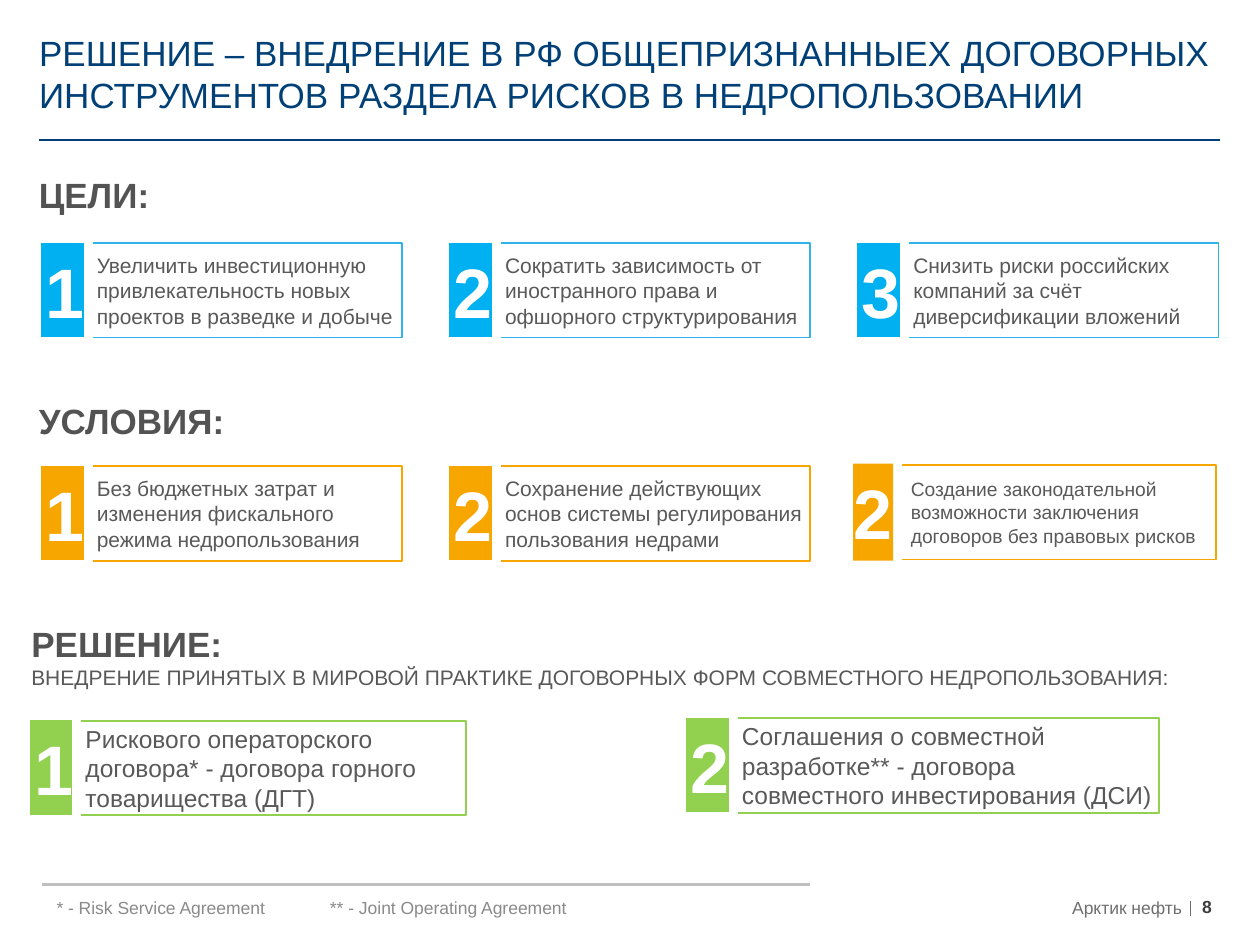
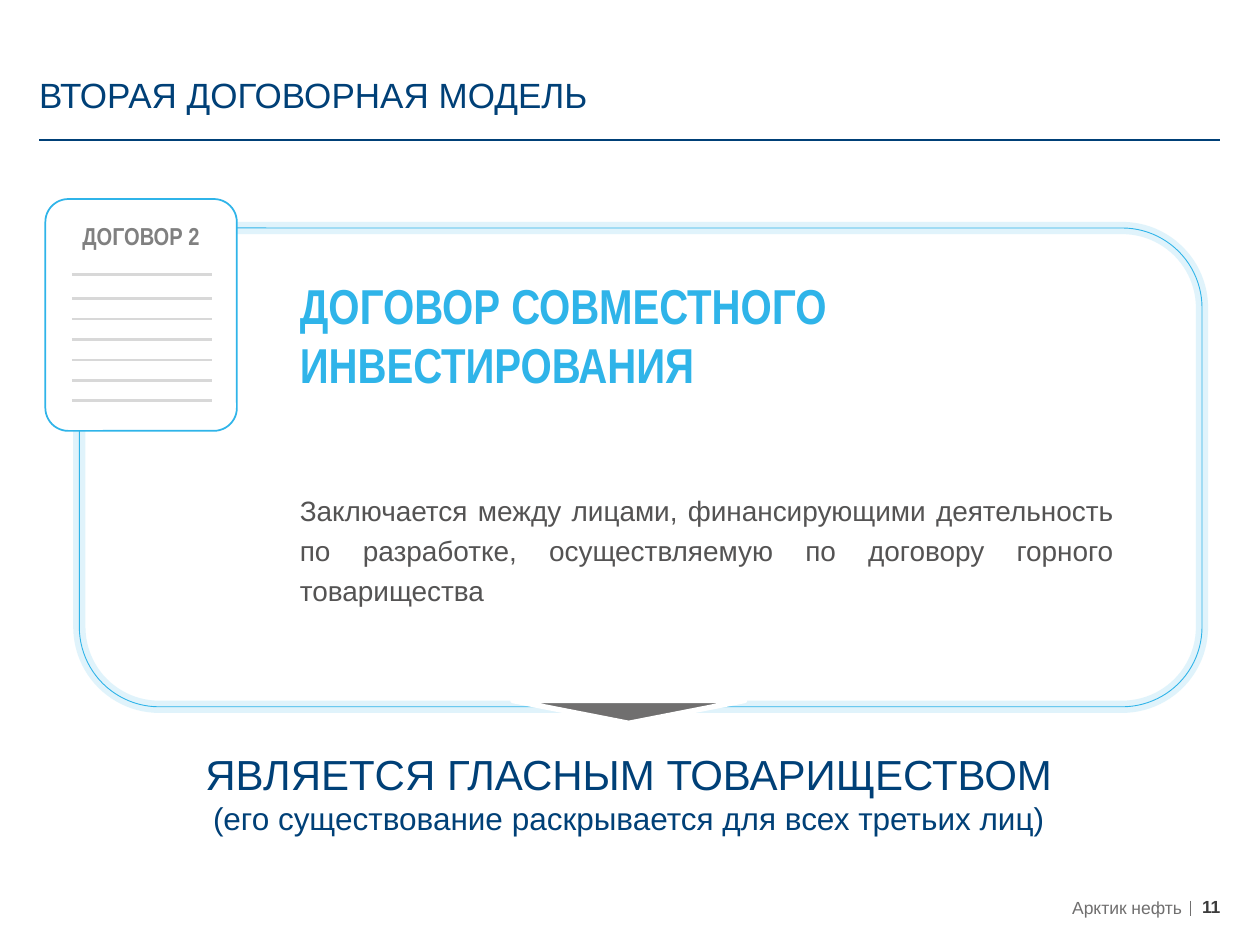
from dataclasses import dataclass

from lxml import etree
from pptx import Presentation
from pptx import util as u
from pptx.dml.color import RGBColor
from pptx.enum import shapes, text
from pptx.oxml.ns import qn

# Grid: every length below is in columns or rows
WIDTH, HEIGHT = u.Inches(10), u.Inches(7.5)
COLUMNS, ROWS = 100, 75
LEFT, RIGHT = 3.1, 96.8

COLORS = {
    "navy": "004077", "cyan": "2FB4E9", "blue": "00B0F0", "orange": "F7A600",
    "green": "92D050", "white": "FFFFFF", "heading": "545353", "body": "595959",
    "note": "8A8A8A", "footer": "706F6F", "number": "3C3C3C", "rule": "BFBFBF",
    "paper": "D8D8D8", "label": "808080",
}
COMPANY = "Арктик нефть"
ALIGN, ANCHOR = text.PP_ALIGN, text.MSO_ANCHOR
SHAPE = shapes.MSO_SHAPE


def color(name):
    return RGBColor.from_string(COLORS[name])


@dataclass
class Line:
    """One paragraph with its look."""
    words: str
    size: float
    color: str
    bold: bool = False
    align: ALIGN = ALIGN.LEFT
    font: str = "Arial"
    spacing: float = 1.0


class Deck:
    def __init__(self):
        self.presentation = Presentation()
        self.presentation.slide_width = WIDTH
        self.presentation.slide_height = HEIGHT
        self.slide = None

    def place(self, column, row, columns, rows):
        x, y = WIDTH / COLUMNS, HEIGHT / ROWS
        return [round(v) for v in (column * x, row * y, columns * x, rows * y)]

    def fill_text(self, frame, lines, margins=(0, 0, 0, 0), anchor=ANCHOR.TOP, wrap=True):
        frame.auto_size = text.MSO_AUTO_SIZE.NONE
        frame.word_wrap = wrap
        frame.vertical_anchor = anchor
        (frame.margin_left, frame.margin_top,
         frame.margin_right, frame.margin_bottom) = map(u.Inches, margins)
        for index, line in enumerate(lines):
            paragraph = frame.add_paragraph() if index else frame.paragraphs[0]
            paragraph.text = line.words
            paragraph.alignment = line.align
            paragraph.line_spacing = line.spacing
            font = paragraph.font
            font.name, font.size, font.bold = line.font, u.Pt(line.size), line.bold
            font.color.rgb = color(line.color)

    def label(self, box, *lines, **layout):
        shape = self.slide.shapes.add_textbox(*self.place(*box))
        self.fill_text(shape.text_frame, lines, **layout)

    def shape(self, box, fill=None, line=None, weight=1, kind=SHAPE.RECTANGLE, opacity=None):
        shape = self.slide.shapes.add_shape(kind, *self.place(*box))
        shape.shadow.inherit = False
        if fill:
            shape.fill.solid()
            shape.fill.fore_color.rgb = color(fill)
        else:
            shape.fill.background()
        if line:
            shape.line.color.rgb = color(line)
            shape.line.width = u.Pt(weight)
        else:
            shape.line.fill.background()
        if opacity:
            tint = shape.line._ln.find(".//" + qn("a:srgbClr"))
            etree.SubElement(tint, qn("a:alpha"), val=str(opacity * 1000))
        return shape

    def line(self, column, row, columns, rows, ink, weight):
        x, y, width, height = self.place(column, row, columns, rows)
        line = self.slide.shapes.add_connector(
            shapes.MSO_CONNECTOR.STRAIGHT, x, y, x + width, y + height)
        line.line.color.rgb = color(ink)
        line.line.width = u.Pt(weight)
        etree.SubElement(line._element.spPr, qn("a:effectLst"))

    def new_slide(self, title, number):
        """Start a slide with its title, rule and footer."""
        self.slide = self.presentation.slides.add_slide(self.presentation.slide_layouts[5])
        holder = self.slide.shapes.title
        holder.left, holder.top, holder.width, holder.height = self.place(
            LEFT, 2.4, RIGHT - LEFT, 6.8)
        self.fill_text(holder.text_frame, [Line(title, 20, "navy")], anchor=ANCHOR.BOTTOM)
        self.line(LEFT, 11.1, RIGHT - LEFT, 0, "navy", 1)
        self.line(94.5, 71.5, 0, 1.2, "footer", 0.75)
        self.label((95.4, 71.1, 2.4, 1.8), Line(str(number), 10, "number", True))
        self.label((59.4, 71.1, 34.4, 1.8),
                   Line(COMPANY, 10, "footer", align=ALIGN.RIGHT), anchor=ANCHOR.MIDDLE)

    def heading(self, column, row, *lines):
        self.label((column, row, 98, 6.4), *lines, margins=(0.1, 0.05, 0.1, 0.05))

    def panel(self, column, row, columns, words, ink, size):
        panel = self.shape((column, row, columns, 7.5), "white", ink)
        self.fill_text(panel.text_frame, [Line(words, size, "body")],
                       margins=(0.1, 0.05, 0, 0.05), anchor=ANCHOR.MIDDLE)

    def digit(self, column, row, columns, number):
        self.label((column, row, columns, 7.7),
                   Line(str(number), 40, "white", True, ALIGN.CENTER),
                   margins=(0, 0.05, 0, 0.05))

    def card(self, column, row, columns, number, words, block, edge, size=12):
        """A panel with a numbered block on its left edge."""
        self.panel(column, row, columns, words, edge, size)
        self.shape((column - 3.8, row - 0.4, 4.1, 8.2), block, "white", 5)
        self.digit(column - 3.1, row - 0.1, 2.8, number)


def goals_slide(deck):
    deck.new_slide("РЕШЕНИЕ – ВНЕДРЕНИЕ В РФ ОБЩЕПРИЗНАННЫЕХ ДОГОВОРНЫХ "
                   "ИНСТРУМЕНТОВ РАЗДЕЛА РИСКОВ В НЕДРОПОЛЬЗОВАНИИ", 8)
    first, step, width = 6.7, 32.4, 25.2

    # Goals
    deck.heading(2.1, 13.3, Line("ЦЕЛИ:", 20, "heading", True))
    goals = [
        "Увеличить инвестиционную привлекательность новых проектов в разведке и добыче",
        "Сократить зависимость от иностранного права и офшорного структурирования",
        "Снизить риски российских компаний за счёт диверсификации вложений",
    ]
    for index, goal in enumerate(goals):
        deck.card(first + index * step, 19.3, width, index + 1, goal, "blue", "cyan")

    # Conditions
    deck.heading(2.1, 31.2, Line("УСЛОВИЯ:", 20, "heading", True))
    conditions = [
        "Без бюджетных затрат и изменения фискального режима недропользования",
        "Сохранение действующих основ системы регулирования пользования недрами",
    ]
    for index, condition in enumerate(conditions):
        deck.card(first + index * step, 37, width, index + 1, condition, "orange", "orange")
    deck.panel(71.3, 36.9, width, "Создание законодательной возможности заключения "
               "договоров без правовых рисков", "orange", 11)
    deck.shape((67.7, 36.8, 3.2, 7.7), "orange")
    deck.digit(67.7, 36.8, 3.2, 2)
    deck.shape((70.9, 36.7, 0.7, 8.1), "white")

    # Solution
    deck.heading(1.5, 48.9, Line("РЕШЕНИЕ:", 20, "heading", True),
                 Line("ВНЕДРЕНИЕ ПРИНЯТЫХ В МИРОВОЙ ПРАКТИКЕ ДОГОВОРНЫХ ФОРМ "
                      "СОВМЕСТНОГО НЕДРОПОЛЬЗОВАНИЯ:", 12, "body"))
    solutions = [
        (5.8, 57.2, 31.2, "Рискового операторского договора* - договора горного "
                          "товарищества (ДГТ)"),
        (57.9, 57, 34.1, "Соглашения о совместной разработке** - договора "
                         "совместного инвестирования (ДСИ)"),
    ]
    for number, (column, row, columns, words) in enumerate(solutions, 1):
        deck.card(column, row, columns, number, words, "green", "green", 14)

    # Footnotes
    deck.line(3.3, 70.2, 61, 0, "rule", 1.5)
    for column, note in ((3.5, "* - Risk Service Agreement"),
                         (25.2, "** - Joint Operating Agreement")):
        deck.label((column, 70.7, 29.9, 2.7), Line(note, 10, "note"),
                   margins=(0.1, 0.05, 0.1, 0.05))


def contract_slide(deck):
    deck.new_slide("ВТОРАЯ ДОГОВОРНАЯ МОДЕЛЬ", 11)
    inset = dict(margins=(0.06,) * 4, anchor=ANCHOR.MIDDLE)

    # Frame with a soft halo
    for weight, opacity in ((7, 15), (0.5, None)):
        deck.shape((6.3, 18.1, 89.1, 38), None, "cyan", weight,
                   SHAPE.ROUNDED_RECTANGLE, opacity)
    deck.label((23.2, 20.8, 60.6, 11.5),
               Line("ДОГОВОР СОВМЕСТНОГО ИНВЕСТИРОВАНИЯ", 28, "cyan", True,
                    font="Arial Narrow"), **inset)
    deck.label((23.2, 33.9, 65.8, 19),
               Line("Заключается между лицами, финансирующими деятельность по "
                    "разработке, осуществляемую по договору горного товарищества",
                    16, "heading", align=ALIGN.JUSTIFY, spacing=1.2), **inset)

    # Contract sheet
    sheet = deck.shape((3.6, 15.8, 15.2, 18.4), "white", "cyan",
                       kind=SHAPE.ROUNDED_RECTANGLE)
    sheet.adjustments[0] = 0.12
    deck.label((6.5, 17.8, 9.4, 2.1),
               Line("ДОГОВОР 2", 14, "label", True, ALIGN.CENTER, "Arial Narrow", 0.9),
               wrap=False)
    for row in [21.8] + [23.7 + 1.62 * index for index in range(6)]:
        deck.line(5.7, row, 11.1, 0, "paper", 1.5)

    # Conclusion
    arrow = deck.shape((40.7, 55.6, 18.4, 1.8), "footer", "white", 3,
                       SHAPE.ISOSCELES_TRIANGLE)
    arrow.rotation = 180
    deck.label((0, 58.8, 99.8, 8.2),
               Line("ЯВЛЯЕТСЯ ГЛАСНЫМ ТОВАРИЩЕСТВОМ", 24, "navy", align=ALIGN.CENTER),
               Line("(его существование раскрывается для всех третьих лиц)", 18, "navy",
                    align=ALIGN.CENTER), **inset)


def main():
    deck = Deck()
    goals_slide(deck)
    contract_slide(deck)
    deck.presentation.save("out.pptx")


if __name__ == "__main__":
    main()
